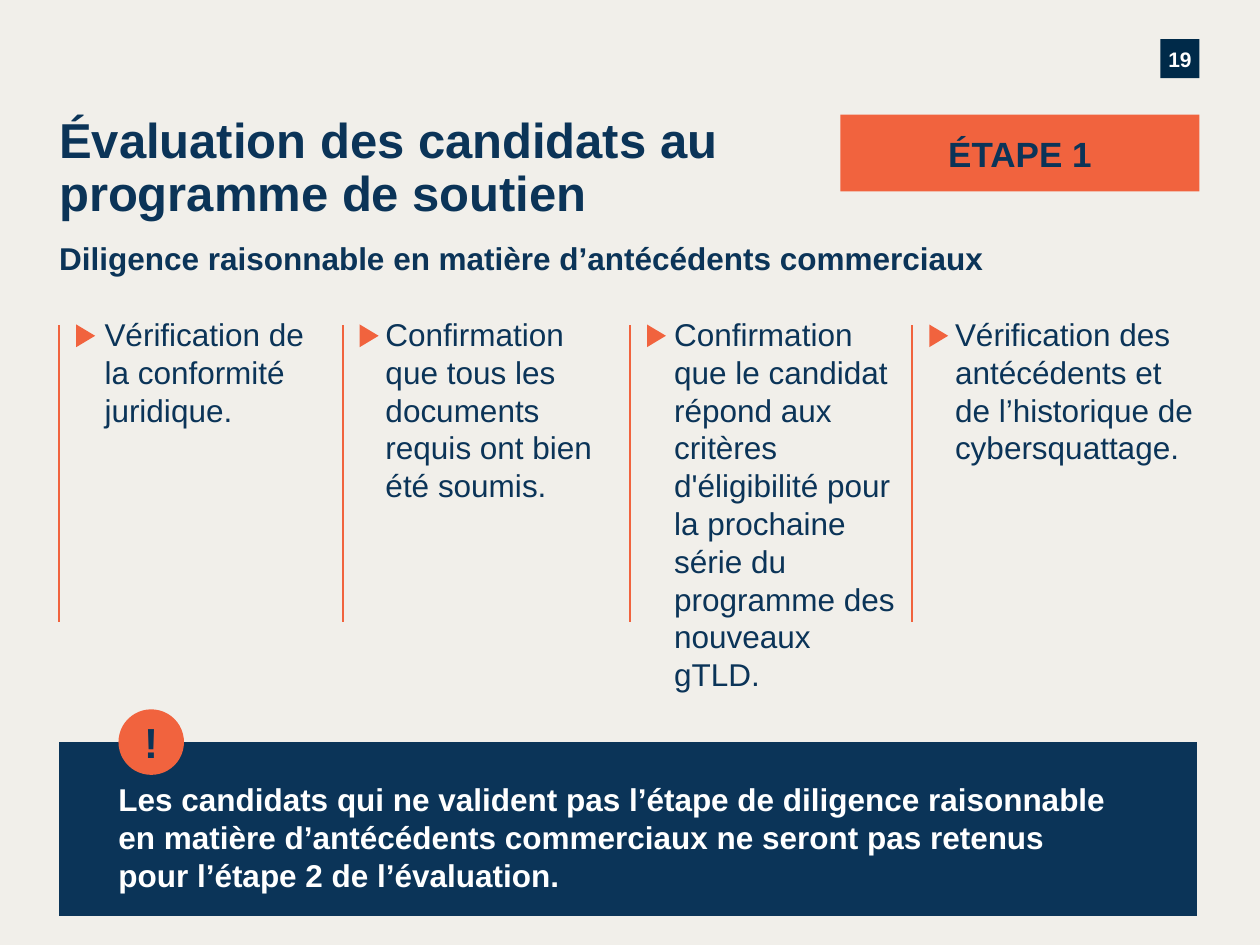
from pptx import Presentation
from pptx.dml.color import RGBColor
from pptx.enum.shapes import MSO_CONNECTOR, MSO_SHAPE
from pptx.enum.text import MSO_ANCHOR, PP_ALIGN
from pptx.util import Inches, Pt
from lxml import etree

RECT, OVAL, TRIANGLE = MSO_SHAPE.RECTANGLE, MSO_SHAPE.OVAL, MSO_SHAPE.ISOSCELES_TRIANGLE
STRAIGHT = MSO_CONNECTOR.STRAIGHT
TOP, MIDDLE = MSO_ANCHOR.TOP, MSO_ANCHOR.MIDDLE
LEFT, CENTER = PP_ALIGN.LEFT, PP_ALIGN.CENTER

CREAM = RGBColor(0xF1, 0xEF, 0xEA)
NAVY = RGBColor(0x0B, 0x34, 0x58)
DARK = RGBColor(0x00, 0x2A, 0x49)
ORANGE = RGBColor(0xF1, 0x63, 0x3E)
WHITE = RGBColor(0xFF, 0xFF, 0xFF)

MARGIN = 0.47
TITLE_TOP = 0.91
TEXT_TOP = 2.5
RULE_TOP, RULE_BOTTOM = 2.58, 4.94
ARROW_W, ARROW_H = 0.18, 0.15

prs = Presentation()
prs.slide_width, prs.slide_height = Inches(10), Inches(7.5)
s = prs.slides.add_slide(prs.slide_layouts[6])
s.background.fill.solid()
s.background.fill.fore_color.rgb = CREAM


def add_shape(kind, x, y, w, h, color):
    sp = s.shapes.add_shape(kind, Inches(x), Inches(y), Inches(w), Inches(h))
    sp.shadow.inherit = False
    sp.fill.solid()
    sp.fill.fore_color.rgb = color
    sp.line.fill.background()
    return sp


def set_text(sp, text, size, color=NAVY, bold=True, align=LEFT, anchor=TOP, insets=(0, 0, 0, 0)):
    tf = sp.text_frame
    tf.word_wrap = True
    tf.vertical_anchor = anchor
    tf.margin_left, tf.margin_top, tf.margin_right, tf.margin_bottom = map(Inches, insets)
    tf.text = text
    p = tf.paragraphs[0]
    p.alignment = align
    font = p.runs[0].font
    font.name, font.size, font.bold = "Arial", Pt(size), bold
    font.color.rgb = color
    return p


sp = add_shape(RECT, 9.21, 0.31, 0.31, 0.31, DARK)
p = set_text(sp, "19", 12, WHITE, align=CENTER, anchor=MIDDLE)
p.line_spacing = 1.08

sp = s.shapes.add_textbox(Inches(MARGIN), Inches(TITLE_TOP), Inches(5.88), Inches(0.55))
p = set_text(sp, "Évaluation des candidats au programme de soutien", 28)
p.line_spacing = Pt(30.6)

sp = s.shapes.add_textbox(Inches(MARGIN), Inches(1.9), Inches(7.51), Inches(0.48))
set_text(sp, "Diligence raisonnable en matière d’antécédents commerciaux", 18)

sp = add_shape(RECT, 6.67, TITLE_TOP, 2.85, 0.61, ORANGE)
set_text(sp, "ÉTAPE 1", 20, align=CENTER, anchor=MIDDLE)

columns = [
    (MARGIN, 0.83, 1.7, 1.03, "Vérification de la conformité juridique."),
    (2.72, 3.06, 1.76, 1.82, "Confirmation que tous les documents requis ont bien été soumis."),
    (5, 5.35, 1.76, 2.53, "Confirmation que le candidat répond aux critères d'éligibilité "
     "pour la prochaine série du programme des nouveaux gTLD."),
    (7.24, 7.58, 1.93, 1.56, "Vérification des antécédents et de l’historique de cybersquattage."),
]
for rule_x, text_x, w, h, text in columns:
    rule = s.shapes.add_connector(STRAIGHT, Inches(rule_x), Inches(RULE_TOP),
                                  Inches(rule_x), Inches(RULE_BOTTOM))
    rule.line.color.rgb = ORANGE
    rule.line.width = Pt(1.25)
    sp_pr = rule.element.spPr
    etree.SubElement(sp_pr, "{%s}effectLst" % sp_pr.nsmap["a"])

    arrow = add_shape(TRIANGLE, rule_x + 0.12, 2.59, ARROW_W, ARROW_H, ORANGE)
    arrow.rotation = 90

    sp = s.shapes.add_textbox(Inches(text_x), Inches(TEXT_TOP), Inches(w), Inches(h))
    set_text(sp, text, 18, bold=False)

sp = add_shape(RECT, MARGIN, 5.89, 9.03, 1.38, NAVY)
set_text(sp, "Les candidats qui ne valident pas l’étape de diligence raisonnable en matière "
         "d’antécédents commerciaux ne seront pas retenus pour l’étape 2 de l’évaluation.",
         18, WHITE, insets=(0.47, 0.3, 0.67, 0.3))

sp = add_shape(OVAL, 2 * MARGIN, 5.63, 0.52, 0.52, ORANGE)
set_text(sp, "!", 24, align=CENTER, anchor=MIDDLE, insets=(0.1, 0.05, 0.1, 0.05))

prs.save("out.pptx")
